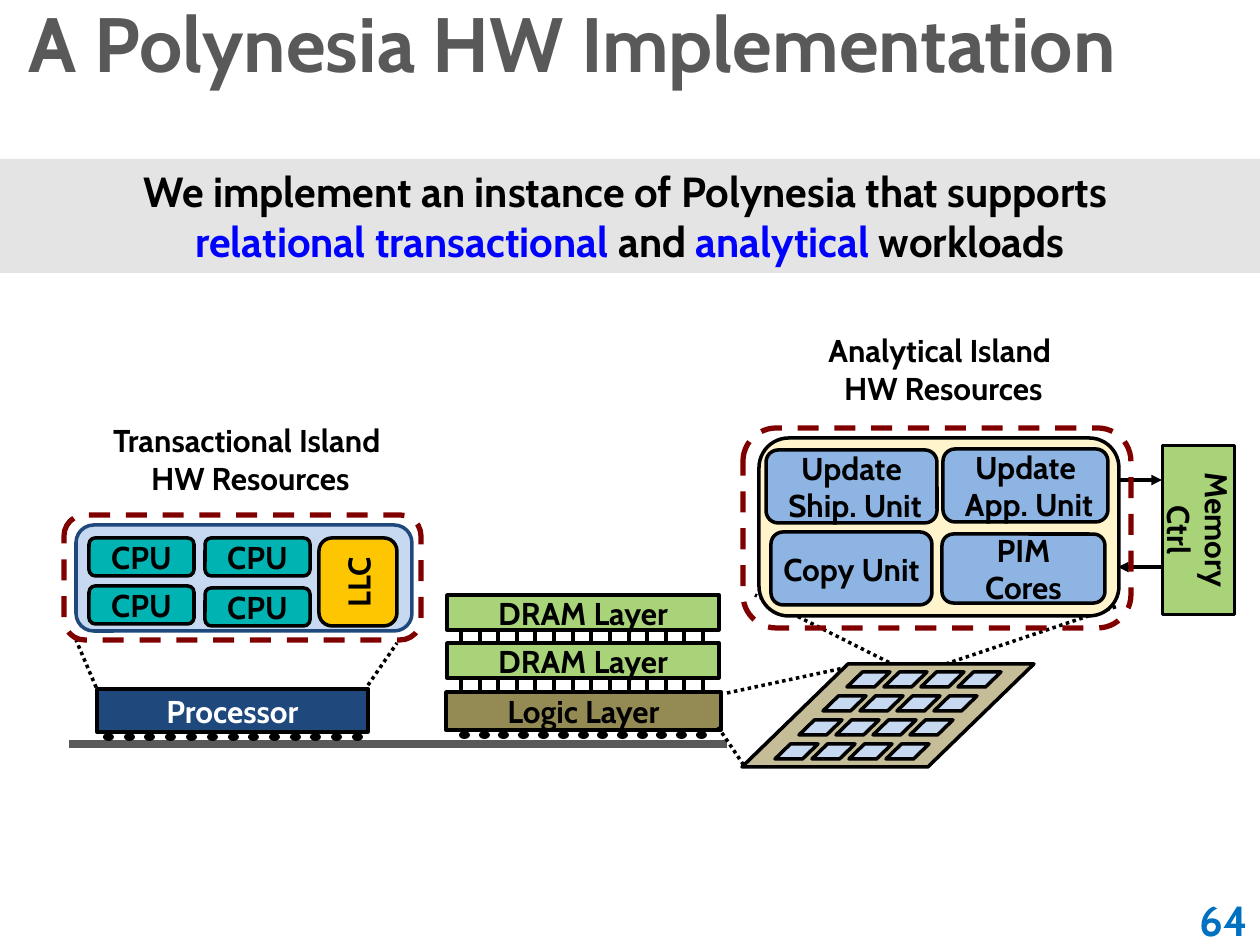
"""Build the hardware implementation slide with its two islands and memory stack."""
from dataclasses import dataclass
from typing import Optional

import pptx
import pptx.dml.color
import pptx.enum.dml
import pptx.enum.shapes
import pptx.enum.text
import pptx.oxml.ns
import pptx.util
from lxml import etree

SHAPE = pptx.enum.shapes.MSO_SHAPE
DASH = pptx.enum.dml.MSO_LINE
ALIGN = pptx.enum.text.PP_ALIGN
ANCHOR = pptx.enum.text.MSO_ANCHOR
PX = 914400 / 126


@dataclass(frozen=True)
class Theme:
    font: str = "Cabin"
    title_pt: int = 44
    banner_pt: int = 24
    label_pt: int = 18
    black: str = "000000"
    white: str = "FFFFFF"
    gray: str = "595959"
    banner: str = "E4E4E4"
    number: str = "0070C0"
    accent: str = "0000FF"
    navy: str = "1F497D"
    pale_blue: str = "C6D9F1"
    teal: str = "00B3B3"
    gold: str = "FDC600"
    green: str = "A8D379"
    olive: str = "948A54"
    cream: str = "FFF4CC"
    unit: str = "8EB4E3"
    tan: str = "C4BD97"
    maroon: str = "800000"


T = Theme()


@dataclass(frozen=True)
class Box:
    x: int
    y: int
    w: int
    h: int
    fill: Optional[str]
    text: str = ""
    kind: SHAPE = SHAPE.ROUNDED_RECTANGLE
    line: Optional[str] = T.black
    width: int = 2
    dash: Optional[DASH] = None
    color: str = T.black
    inset: int = 0
    rotation: int = 0
    vert: Optional[str] = None
    adj: Optional[float] = None


@dataclass(frozen=True)
class Line:
    x1: int
    y1: int
    x2: int
    y2: int
    color: str = T.black
    width: float = 2
    dash: Optional[DASH] = None
    arrow: bool = False


@dataclass(frozen=True)
class Label:
    x: int
    y: int
    w: int
    h: int
    text: str
    size: int = T.label_pt
    color: str = T.black
    align: ALIGN = ALIGN.CENTER
    anchor: ANCHOR = ANCHOR.TOP
    left: int = 13


def emu(px: float) -> int:
    """Convert pixels to EMU."""
    return round(px * PX)


def rgb(color: str) -> pptx.dml.color.RGBColor:
    """Turn a hex string into a colour."""
    return pptx.dml.color.RGBColor.from_string(color)


def style_run(r, size: int, color: str) -> None:
    """Apply the bold slide font to a run."""
    r.font.name = T.font
    r.font.size = pptx.util.Pt(size)
    r.font.bold = True
    r.font.color.rgb = rgb(color)


def write(tf, text: str, size: int, color: str, align: ALIGN, anchor: ANCHOR) -> None:
    """Fill a text frame and format its runs."""
    tf.text = text
    tf.word_wrap = True
    tf.vertical_anchor = anchor
    for p in tf.paragraphs:
        p.alignment = align
        for r in p.runs:
            style_run(r, size, color)


def draw_box(s, box: Box):
    """Draw a preset shape with optional centred text."""
    sp = s.shapes.add_shape(box.kind, *map(emu, (box.x, box.y, box.w, box.h)))
    sp.shadow.inherit = False
    sp.rotation = box.rotation
    if box.adj is not None:
        sp.adjustments[0] = box.adj
    if box.fill:
        sp.fill.solid()
        sp.fill.fore_color.rgb = rgb(box.fill)
    else:
        sp.fill.background()
    if box.line:
        sp.line.color.rgb = rgb(box.line)
        sp.line.width = pptx.util.Pt(box.width)
        if box.dash:
            sp.line.dash_style = box.dash
    else:
        sp.line.fill.background()
    if box.text:
        tf = sp.text_frame
        tf.margin_left = tf.margin_right = emu(box.inset)
        tf.margin_top = tf.margin_bottom = 0
        write(tf, box.text, T.label_pt, box.color, ALIGN.CENTER, ANCHOR.MIDDLE)
        if box.vert:
            tf._txBody.bodyPr.set("vert", box.vert)
    return sp


def draw_line(s, line: Line) -> None:
    """Draw a straight connector, optionally with an arrowhead."""
    straight = pptx.enum.shapes.MSO_CONNECTOR.STRAIGHT
    sp = s.shapes.add_connector(straight, *map(emu, (line.x1, line.y1, line.x2, line.y2)))
    sp.line.color.rgb = rgb(line.color)
    sp.line.width = pptx.util.Pt(line.width)
    if line.dash:
        sp.line.dash_style = line.dash
    if line.arrow:
        etree.SubElement(sp.line._ln, pptx.oxml.ns.qn("a:tailEnd"), type="triangle")
    etree.SubElement(sp._element.spPr, pptx.oxml.ns.qn("a:effectLst"))


def draw_label(s, label: Label) -> None:
    """Draw a text box."""
    sp = s.shapes.add_textbox(*map(emu, (label.x, label.y, label.w, label.h)))
    sp.text_frame.margin_left = emu(label.left)
    write(sp.text_frame, label.text, label.size, label.color, label.align, label.anchor)


def draw_banner(s) -> None:
    """Draw the grey statement bar with its highlighted words."""
    sp = draw_box(s, Box(0, 159, 1260, 114, T.banner, kind=SHAPE.RECTANGLE, line=None))
    tf = sp.text_frame
    tf.word_wrap = True
    tf.vertical_anchor = ANCHOR.TOP
    p = tf.paragraphs[0]
    p.alignment = ALIGN.CENTER
    lines = (
        (("We implement an instance of Polynesia that supports ", T.black),),
        (("relational transactional ", T.accent), ("and ", T.black),
         ("analytical", T.accent), (" workloads", T.black)),
    )
    for i, parts in enumerate(lines):
        if i:
            p.add_line_break()
        for text, color in parts:
            r = p.add_run()
            r.text = text
            style_run(r, T.banner_pt, color)


def dotted(x1: int, y1: int, x2: int, y2: int) -> Line:
    """Describe a dotted zoom line."""
    return Line(x1, y1, x2, y2, dash=DASH.ROUND_DOT)


def spread(first: int, last: int, count: int) -> list[int]:
    """Space positions evenly between two ends."""
    return [round(first + i * (last - first) / (count - 1)) for i in range(count)]


def slab(x: int, y: int, w: int, h: int, fill: str, text: str, color: str = T.black) -> Box:
    """Describe a flat chip or memory layer."""
    return Box(x, y, w, h, fill, text, SHAPE.RECTANGLE, color=color)


def bumps(first: int, last: int, y: int) -> list[Box]:
    """Describe a row of solder bumps."""
    return [Box(x, y, 11, 8, T.black, kind=SHAPE.OVAL, line=None) for x in spread(first, last, 13)]


def pins(y: int) -> list[Line]:
    """Describe the links between two memory layers."""
    return [Line(x, y, x, y + 11) for x in spread(461, 703, 14)]


def tile(x: int, y: int, w: int, h: int, fill: str) -> Box:
    """Describe a slanted tile."""
    return Box(x, y, w, h, fill, kind=SHAPE.PARALLELOGRAM, adj=1.03)


def outline(x: int, y: int, w: int, h: int) -> Box:
    """Describe a dashed island border."""
    return Box(x, y, w, h, None, line=T.maroon, width=3, dash=DASH.DASH)


def main() -> None:
    """Assemble and save the slide."""
    prs = pptx.Presentation()
    prs.slide_width, prs.slide_height = emu(1260), emu(945)
    s = prs.slides.add_slide(prs.slide_layouts[6])
    items = [
        Label(-21, -21, 1260, 126, "A Polynesia HW Implementation", T.title_pt, T.gray,
              ALIGN.LEFT, ANCHOR.MIDDLE, 50),
        Label(1008, 895, 252, 50, "64", T.banner_pt, T.number, ALIGN.RIGHT, ANCHOR.MIDDLE),
        Line(69, 744, 727, 744, T.gray, 4.5),
        dotted(99, 694, 76, 640), dotted(364, 691, 397, 643),
        Box(76, 525, 336, 106, T.pale_blue, line=T.navy),
        *(Box(x, y, 105, 38, T.teal, "CPU")
          for x, y in ((89, 538), (205, 538), (89, 586), (205, 588))),
        Box(319, 538, 78, 88, T.gold, "LLC", vert="vert270"),
        slab(97, 689, 271, 43, T.navy, "Processor", T.white),
        *bumps(103, 352, 733),
        slab(447, 643, 272, 35, T.green, "DRAM Layer"), *pins(680),
        slab(446, 692, 275, 38, T.olive, "Logic Layer"), *bumps(459, 696, 731),
        slab(447, 595, 272, 35, T.green, "DRAM Layer"), *pins(631),
        dotted(718, 727, 743, 764), dotted(727, 693, 858, 665),
        dotted(908, 672, 755, 595), dotted(919, 673, 1118, 606),
        Line(1162, 567, 1118, 567, arrow=True), Line(1118, 480, 1162, 480, arrow=True),
        Box(759, 438, 360, 178, T.cream),
        Box(943, 449, 165, 73, T.unit, "Update\v App. Unit"),
        Box(771, 532, 161, 73, T.unit, "Copy Unit"),
        Box(942, 534, 163, 69, T.unit, "PIM\vCores"),
        Box(1114, 494, 169, 72, T.green, "Memory Ctrl", SHAPE.RECTANGLE, inset=13, rotation=90),
        Box(766, 450, 171, 73, T.unit, "Update\v Ship. Unit"),
        tile(742, 664, 292, 103, T.tan),
        *(tile(847 - 24 * row + 37 * col, 672 + 24 * row, 43, 15, T.pale_blue)
          for row in range(4) for col in range(4)),
        outline(64, 515, 357, 125),
        Label(63, 415, 367, 82, "Transactional Island\v HW Resources"),
        outline(743, 428, 388, 200),
        Label(756, 325, 367, 82, "Analytical Island\v HW Resources"),
    ]
    draw_banner(s)
    painters = {Box: draw_box, Line: draw_line, Label: draw_label}
    for item in items:
        painters[type(item)](s, item)
    prs.save("out.pptx")


if __name__ == "__main__":
    main()
